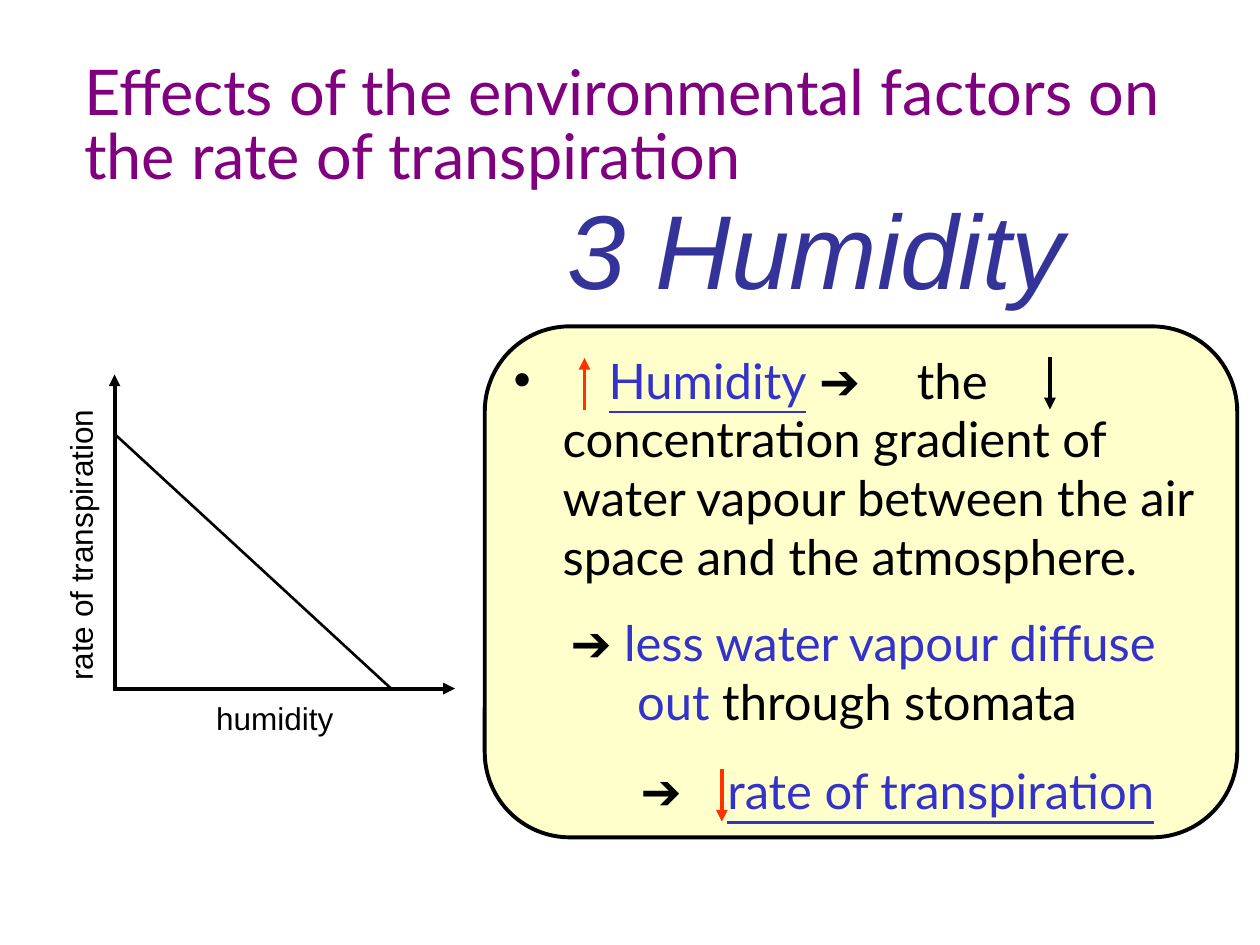
from lxml import etree
from pptx import Presentation
from pptx.dml.color import RGBColor
from pptx.enum import shapes, text
from pptx.oxml import ns
from pptx.util import Pt

BLACK = RGBColor(0x00, 0x00, 0x00)
PURPLE = RGBColor(0x80, 0x00, 0x80)
INDIGO = RGBColor(0x33, 0x33, 0x99)
BLUE = RGBColor(0x33, 0x33, 0xCC)
RED = RGBColor(0xFF, 0x33, 0x00)
CREAM = RGBColor(0xFF, 0xFF, 0xCC)

BODY = {"name": "Lato", "size": Pt(28)}
AXIS_LABEL = {"name": "Arial", "size": Pt(18)}


def add_child(parent, tag, **attributes):
    return etree.SubElement(parent, ns.qn(tag), attributes)


def add_text(slide, box, runs, font, wrap=True, **paragraph_format):
    """Add one paragraph; each run is (words, colour, underlined, extra gap)."""
    shape = slide.shapes.add_textbox(*(Pt(length) for length in box))
    shape.text_frame.word_wrap = wrap
    shape.text_frame.auto_size = text.MSO_AUTO_SIZE.SHAPE_TO_FIT_TEXT
    paragraph = shape.text_frame.paragraphs[0]
    for name, value in paragraph_format.items():
        setattr(paragraph, name, value)
    for words, colour, underline, gap in runs:
        run = paragraph.add_run()
        run.text = words
        for name, value in {**font, "underline": underline}.items():
            setattr(run.font, name, value)
        run.font.color.rgb = colour
        if gap:
            run._r.get_or_add_rPr().set("spc", str(round(gap * 100)))
    return shape


def plain(words, colour=BLACK):
    return words, colour, False, 0


def key_term(words):
    return words, BLUE, True, 0


def wide_space(extra):
    """One space, widened to leave room for an arrow."""
    return " ", BLACK, False, extra


def set_hanging_indent(shape, indent, bullet=None):
    properties = shape.text_frame.paragraphs[0]._p.get_or_add_pPr()
    properties.set("marL", str(Pt(indent)))
    properties.set("indent", str(-Pt(indent)))
    if bullet:
        colour = add_child(properties, "a:buClr")
        add_child(colour, "a:srgbClr", val=str(BLACK))
        add_child(properties, "a:buFont", typeface="Arial")
        add_child(properties, "a:buChar", char=bullet)


def add_line(slide, start, end, colour=BLACK, width=2.25, arrow=True):
    points = (Pt(length) for length in (*start, *end))
    line = slide.shapes.add_connector(shapes.MSO_CONNECTOR.STRAIGHT, *points)
    line.line.color.rgb = colour
    line.line.width = Pt(width)
    if arrow:
        add_child(line.line._get_or_add_ln(), "a:tailEnd", type="triangle")
    add_child(line._element.spPr, "a:effectLst")


def add_title(slide, left, top, width, height):
    words = "Effects of the environmental factors on the rate of transpiration"
    add_text(slide, (left, top, width, height), [plain(words, PURPLE)],
             {"name": "Lato", "size": Pt(36)}, line_spacing=0.85)


def add_heading(slide, left, top, width, height):
    add_text(slide, (left, top, width, height), [plain("3 Humidity", INDIGO)],
             {"name": "Arial", "size": Pt(60), "italic": True},
             wrap=False, alignment=text.PP_ALIGN.RIGHT)


def add_graph(slide, left, top, width, height):
    bottom = top + height
    add_line(slide, (left, bottom), (left, top))
    add_line(slide, (left - 1, bottom), (left + width, bottom))
    add_line(slide, (left, top + 34), (left + 158, bottom), width=1.5, arrow=False)
    label_format = {"font": AXIS_LABEL, "wrap": False,
                    "alignment": text.PP_ALIGN.CENTER}
    add_text(slide, (left + 50.5, bottom + 2.5, 82, 29),
             [plain("humidity")], **label_format)
    rate = add_text(slide, (left - 111.5, top + 83, 184, 29),
                    [plain("rate of transpiration")], **label_format)
    rate.rotation = 270


def add_explanation(slide, left, top, width, height):
    panel = slide.shapes.add_shape(
        shapes.MSO_SHAPE.FLOWCHART_ALTERNATE_PROCESS,
        Pt(left), Pt(top), Pt(width), Pt(height))
    panel.shadow.inherit = False
    panel.fill.solid()
    panel.fill.fore_color.rgb = CREAM
    panel.line.color.rgb = BLACK
    panel.line.width = Pt(2.25)

    cause = add_text(
        slide, (left + 9.5, top + 10, 410.4, 142),
        [wide_space(19), key_term("Humidity"), plain(" ➔"), wide_space(25.3),
         plain("the concentration gradient of water vapour between the air "
               "space and the atmosphere.")], BODY)
    set_hanging_indent(cause, 28, "•")
    effect = add_text(
        slide, (left + 42, top + 160, 374.4, 74),
        [plain("➔ "), plain("less water vapour diffuse out", BLUE),
         plain(" through stomata")], BODY)
    set_hanging_indent(effect, 38)
    result = add_text(
        slide, (left + 82, top + 244.8, 385, 41),
        [plain("➔"), wide_space(19), key_term("rate of transpiration")], BODY)
    set_hanging_indent(result, 38)

    for x, start, end, colour in ((57, 48, 18, RED), (323, 17.5, 47.5, BLACK),
                                  (135.5, 253, 283, RED)):
        add_line(slide, (left + x, top + start), (left + x, top + end), colour)


def main():
    presentation = Presentation()
    presentation.slide_width = Pt(720)
    presentation.slide_height = Pt(540)
    slide = presentation.slides.add_slide(presentation.slide_layouts[6])
    add_explanation(slide, 277, 186.5, 430, 292)
    add_heading(slide, 314, 102, 301, 80)
    add_graph(slide, 65.5, 214, 194.5, 179.5)
    add_title(slide, 41, 33, 674, 81)
    presentation.save("out.pptx")


if __name__ == "__main__":
    main()
